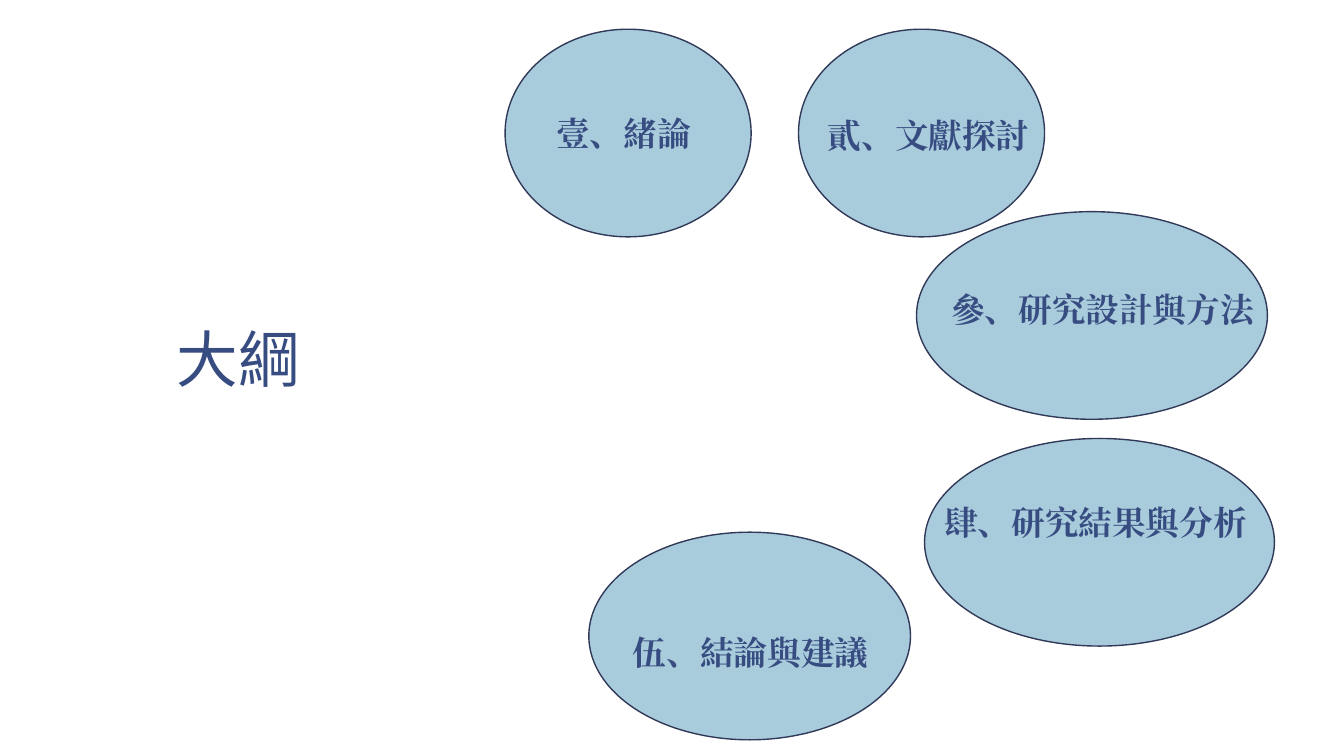
"""Builds the outline slide: a title and five chapter ovals."""
from dataclasses import dataclass

from lxml.etree import SubElement
from pptx import Presentation
from pptx.dml.color import RGBColor
from pptx.enum.shapes import MSO_SHAPE
from pptx.enum.text import MSO_ANCHOR, PP_ALIGN
from pptx.oxml.ns import qn
from pptx.util import Inches, Pt


@dataclass(frozen=True)
class Theme:
    ink: RGBColor = RGBColor(0x37, 0x4C, 0x81)
    oval: RGBColor = RGBColor(0xA9, 0xCC, 0xDC)
    outline: RGBColor = RGBColor(0x30, 0x3A, 0x58)
    title_font: str = "Noto Sans CJK SC"
    label_font: str = "Times New Roman"
    title_size: int = 44
    label_size: int = 24


def write(frame, text, *, font, size, color, bold=False,
          align=PP_ALIGN.LEFT, anchor=MSO_ANCHOR.MIDDLE, spacing=1.0):
    frame.word_wrap = True
    frame.vertical_anchor = anchor
    paragraph = frame.paragraphs[0]
    paragraph.alignment = align
    paragraph.line_spacing = spacing
    run = paragraph.add_run()
    run.text = text
    run.font.name = font
    run.font.size = Pt(size)
    run.font.bold = bold
    run.font.color.rgb = color
    SubElement(run.font._element, qn("a:ea"), typeface=font)


class OutlineSlide:
    def __init__(self, deck, theme):
        self.theme = theme
        self.slide = deck.slides.add_slide(deck.slide_layouts[5])

    def title(self, text, left, top, width, height):
        heading = self.slide.shapes.title
        heading.left, heading.top = Inches(left), Inches(top)
        heading.width, heading.height = Inches(width), Inches(height)
        frame = heading.text_frame
        frame.margin_left = frame.margin_right = Inches(0.13)
        frame.margin_top = frame.margin_bottom = Inches(0.07)
        write(frame, text, font=self.theme.title_font, size=self.theme.title_size,
              color=self.theme.ink, anchor=MSO_ANCHOR.BOTTOM, spacing=0.85)

    def oval(self, left, top, width, height):
        chapter = self.slide.shapes.add_shape(
            MSO_SHAPE.OVAL, Inches(left), Inches(top), Inches(width), Inches(height))
        chapter.shadow.inherit = False
        chapter.fill.solid()
        chapter.fill.fore_color.rgb = self.theme.oval
        chapter.line.color.rgb = self.theme.outline
        chapter.line.width = Pt(1)

    def label(self, text, left, top, width, height=0.5):
        caption = self.slide.shapes.add_textbox(
            Inches(left), Inches(top), Inches(width), Inches(height))
        write(caption.text_frame, text, font=self.theme.label_font,
              size=self.theme.label_size, color=self.theme.ink, bold=True,
              align=PP_ALIGN.CENTER)


OVAL_HEIGHT = 2.06
CHAPTERS = [
    ("壹、緒論", (5.01, 0.29, 2.44), (3.19, 1.07, 5.99)),
    ("貳、文獻探討", (7.92, 0.29, 2.44), (8.1, 1.09, 2.22)),
    ("參、研究設計與方法", (9.09, 2.1, 3.48), (8.84, 2.82, 4.19)),
    ("肆、研究結果與分析", (9.17, 4.35, 3.47), (9.25, 4.93, 3.23)),
    ("伍、結論與建議", (5.84, 5.28, 3.19), (5.83, 6.22, 3.23)),
]


def main():
    deck = Presentation()
    deck.slide_width, deck.slide_height = Inches(13.33), Inches(7.5)
    outline = OutlineSlide(deck, Theme())
    outline.title("大綱", 1.62, 2.46, 11.11, 1.53)
    for _, oval_place, _ in CHAPTERS:
        outline.oval(*oval_place, OVAL_HEIGHT)
    for text, _, label_place in CHAPTERS:
        outline.label(text, *label_place)
    deck.save("out.pptx")


if __name__ == "__main__":
    main()
